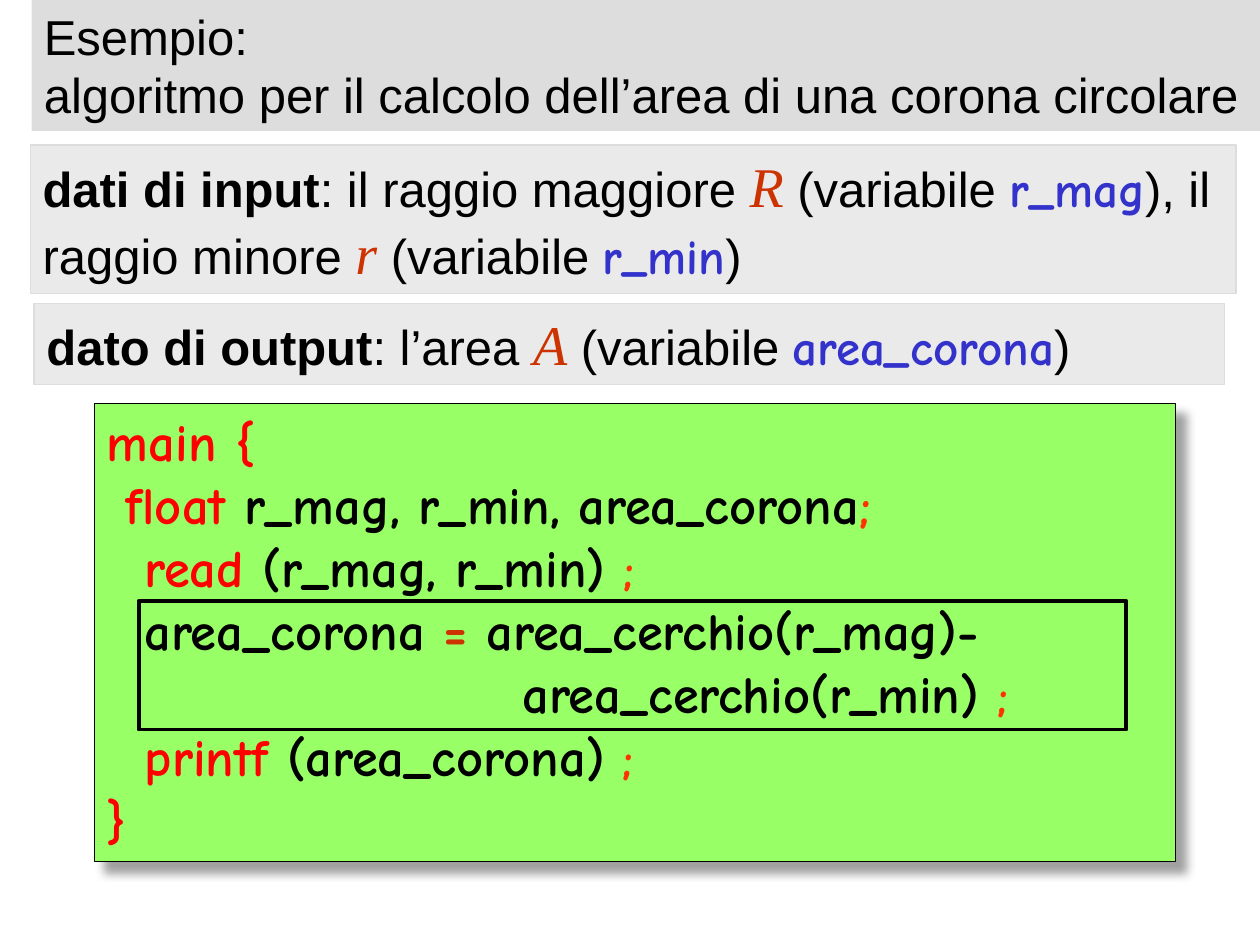
from dataclasses import dataclass

from lxml.etree import SubElement
from pptx import Presentation
from pptx.dml.color import RGBColor as RGB
from pptx.enum.shapes import MSO_SHAPE as Shape
from pptx.enum.text import MSO_ANCHOR as Anchor, PP_ALIGN as Align
from pptx.oxml.ns import qn
from pptx.util import Inches, Pt


@dataclass(frozen=True)
class Style:
    size: int
    font: str
    color: str
    bold: bool = False
    italic: bool = False


SANS, SERIF, COMIC = "Arial", "Times New Roman", "Comic Neue"


class Theme:
    title, panel, code = "DDDDDD", "EAEAEA", "99FF66"
    edge, ink, shade = "DDDDDD", "000000", "808080"
    text = {
        "body": Style(28, SANS, "000000"),
        "bold": Style(28, SANS, "000000", bold=True),
        "math": Style(32, SERIF, "CC3300", italic=True),
        "var": Style(28, COMIC, "3333CC", bold=True),
        "key": Style(30, COMIC, "FF0000", bold=True),
        "name": Style(30, COMIC, "000000", bold=True),
        "op": Style(30, COMIC, "CC3300", bold=True),
        "end": Style(30, COMIC, "FF3300", bold=True),
        "stop": Style(28, COMIC, "FF3300", bold=True),
    }


def add_box(slide, box, fill=None, line=None, width=0.75):
    """Add a plain rectangle at (left, top, width, height) in inches."""
    rect = slide.shapes.add_shape(Shape.RECTANGLE, *map(Inches, box))
    rect.shadow.inherit = False
    if fill:
        rect.fill.solid()
        rect.fill.fore_color.rgb = RGB.from_string(fill)
    else:
        rect.fill.background()
    if line:
        rect.line.color.rgb = RGB.from_string(line)
        rect.line.width = Pt(width)
    else:
        rect.line.fill.background()
    return rect


def write(rect, lines, align=Align.LEFT, wrap=True):
    """Fill a shape with lines, each an indent in inches and its runs."""
    frame = rect.text_frame
    frame.word_wrap = wrap
    frame.vertical_anchor = Anchor.TOP
    for i, (indent, runs) in enumerate(lines):
        para = frame.add_paragraph() if i else frame.paragraphs[0]
        para.alignment = align
        if indent:
            props = para._p.get_or_add_pPr()
            props.set("marL", str(Inches(indent)))
            props.set("indent", "0")
        for kind, text in runs:
            style = Theme.text[kind]
            run = para.add_run()
            run.text = text
            font = run.font
            font.size, font.name = Pt(style.size), style.font
            font.bold, font.italic = style.bold, style.italic
            font.color.rgb = RGB.from_string(style.color)


def add_shade(rect):
    """Cast a soft grey shadow to the lower right."""
    effects = rect._element.spPr.find(qn("a:effectLst"))
    outer = SubElement(effects, qn("a:outerShdw"), blurRad=str(Pt(5)),
                       dist=str(Pt(8.5)), dir=str(45 * 60000),
                       algn="tl", rotWithShape="0")
    color = SubElement(outer, qn("a:srgbClr"), val=Theme.shade)
    SubElement(color, qn("a:alpha"), val="75000")


def add_title(slide, box, lines):
    rect = add_box(slide, box, Theme.title)
    write(rect, [(0, [("body", line)]) for line in lines], wrap=False)


def add_panel(slide, box, runs):
    write(add_box(slide, box, Theme.panel, Theme.edge), [(0, runs)])


def add_code(slide, box, lines):
    rect = add_box(slide, box, Theme.code, Theme.ink)
    add_shade(rect)
    write(rect, lines, Align.JUSTIFY)
    # Frame around the two-line assignment
    left, top = box[:2]
    add_box(slide, (left + 0.35, top + 1.57, 7.84, 1.02),
            line=Theme.ink, width=2.25)


def main():
    deck = Presentation()
    deck.slide_width, deck.slide_height = Inches(10), Inches(7.5)
    slide = deck.slides.add_slide(deck.slide_layouts[6])

    # Program text
    step, deep, far = 0.15, 0.3, 3.3
    stop = ("stop", " ;")
    add_code(slide, (0.75, 3.2, 8.58, 3.64), [
        (0, [("key", "main {")]),
        (step, [("key", "float "),
                ("name", "r_mag, r_min, area_corona"), ("end", ";")]),
        (deep, [("key", "read "), ("name", "(r_mag, r_min)"), stop]),
        (deep, [("name", "area_corona "), ("op", "= "),
                ("name", "area_cerchio(r_mag)-")]),
        (far, [("name", "area_cerchio(r_min)"), stop]),
        (deep, [("key", "printf "), ("name", "(area_corona)"), stop]),
        (0, [("key", "}")]),
    ])

    # Heading
    add_title(slide, (0.25, 0, 9.81, 1.04), [
        "Esempio:",
        "algoritmo per il calcolo dell’area di una corona circolare",
    ])

    # Input and output data
    add_panel(slide, (0.24, 1.15, 9.57, 1.18), [
        ("bold", "dati di input"), ("body", ": il raggio maggiore "),
        ("math", "R"), ("body", " (variabile "), ("var", "r_mag"),
        ("body", "), il raggio minore "), ("math", "r"),
        ("body", " (variabile "), ("var", "r_min"), ("body", ")"),
    ])
    add_panel(slide, (0.27, 2.41, 9.45, 0.64), [
        ("bold", "dato di output"), ("body", ": l’area "), ("math", "A"),
        ("body", " (variabile "), ("var", "area_corona"), ("body", ")"),
    ])

    deck.save("out.pptx")


if __name__ == "__main__":
    main()
